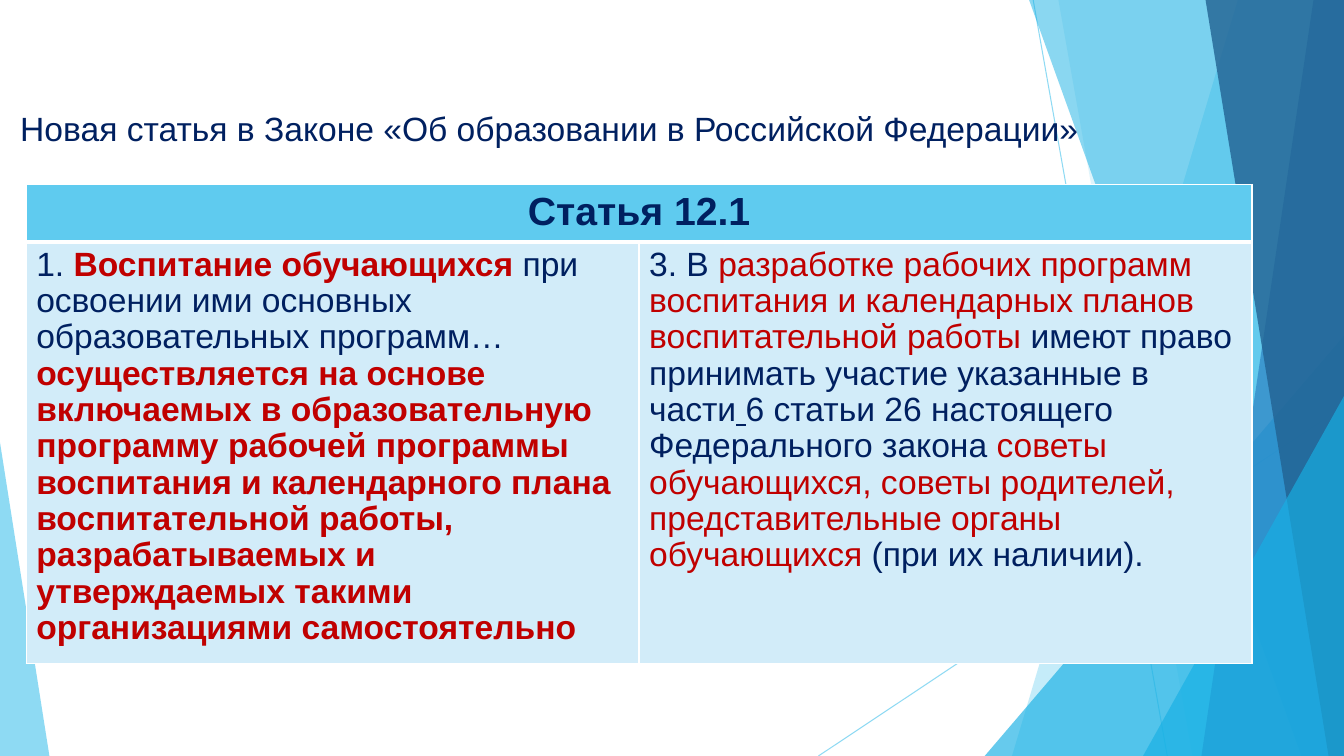
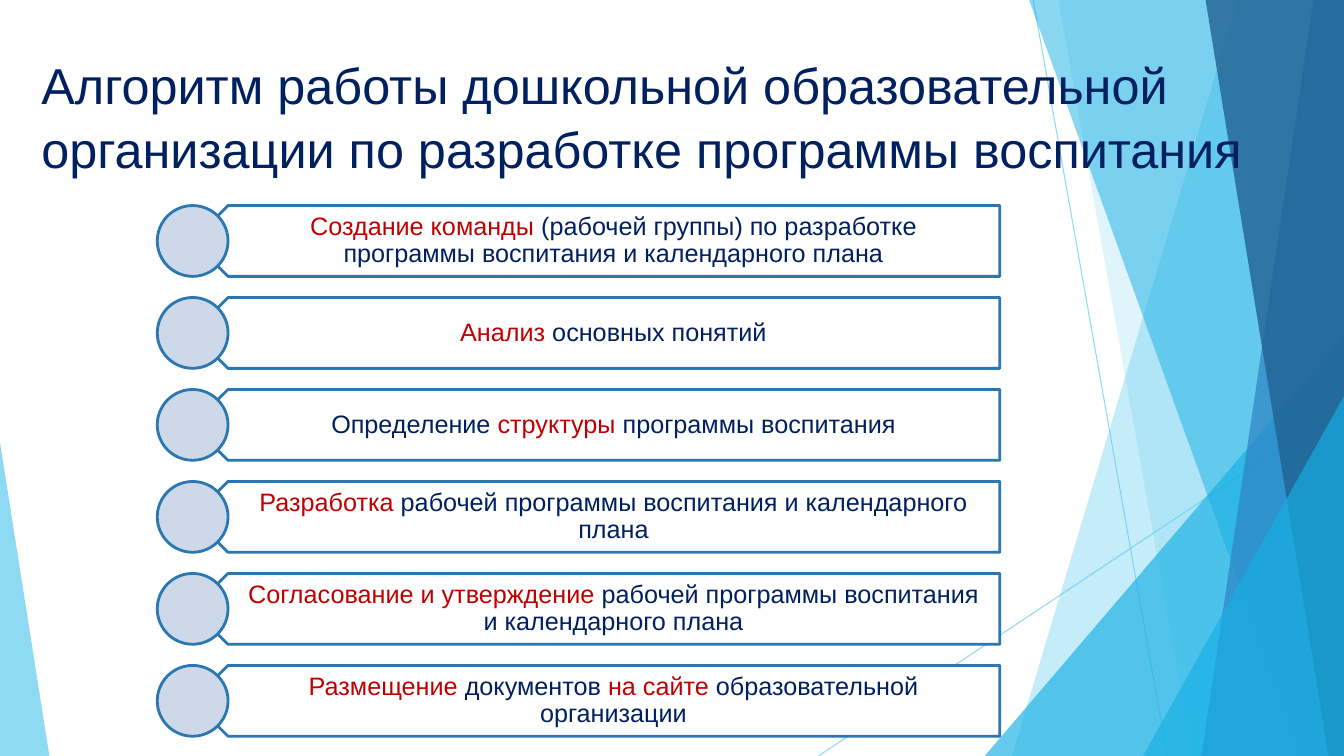
from dataclasses import dataclass

import pptx
import pptx.dml.color
import pptx.enum.shapes
import pptx.enum.text
import pptx.oxml.ns
import pptx.oxml.xmlchemy
import pptx.shapes.base
import pptx.shapes.group
import pptx.slide
import pptx.table
import pptx.text.text
import pptx.util
from lxml import etree

Pt = pptx.util.Pt
RGBColor = pptx.dml.color.RGBColor
Align = pptx.enum.text.PP_ALIGN
Anchor = pptx.enum.text.MSO_ANCHOR
Shape = pptx.enum.shapes.MSO_SHAPE
qn = pptx.oxml.ns.qn

NAVY = RGBColor(0x00, 0x20, 0x60)
RED = RGBColor(0xC0, 0x00, 0x00)
WHITE = RGBColor(0xFF, 0xFF, 0xFF)
SKY = RGBColor(0x5F, 0xCB, 0xEF)
CYAN = RGBColor(0x17, 0xB0, 0xE4)
BLUE = RGBColor(0x2E, 0x83, 0xC3)
DEEP_BLUE = RGBColor(0x22, 0x62, 0x92)
PALE_SKY = RGBColor(0xD2, 0xEC, 0xF9)
OUTLINE = RGBColor(0x2A, 0x77, 0xB1)
BULLET = RGBColor(0xCD, 0xD9, 0xE9)

FONT = "Arial"
WIDTH, HEIGHT = 960, 540


@dataclass(frozen=True)
class Span:
    text: str
    color: RGBColor = NAVY
    bold: bool = False
    underline: bool = False


@dataclass(frozen=True)
class Ray:
    start: tuple[float, float]
    end: tuple[float, float]


@dataclass(frozen=True)
class Band:
    top_x: float
    bottom_x: float
    color: RGBColor
    opacity: int


@dataclass(frozen=True)
class Wedge:
    left: float
    top: float
    width: float
    apex: float
    color: RGBColor
    opacity: int


RAYS = [Ray((738, 0), (833.8, HEIGHT)), Ray((WIDTH, 290.2), (584.6, HEIGHT))]

FACETS = [
    Band(884.2, 722.9, SKY, 36),
    Band(756, 851.8, SKY, 20),
    Wedge(703.4, 239.8, 256.6, 1, CYAN, 66),
    Band(735.1, 929.5, CYAN, 50),
    Band(938.2, 858.2, BLUE, 70),
    Band(861.1, 949, DEEP_BLUE, 80),
    Wedge(816.5, 283, 143.5, 1, CYAN, 66),
    Wedge(0, 316.1, 35.3, 0, SKY, 70),
]

ARTICLE = [
    [
        Span("1. "),
        Span("Воспитание обучающихся", RED, bold=True),
        Span(" при освоении ими основных образовательных программ… "),
        Span(
            "осуществляется на основе включаемых в образовательную программу "
            "рабочей программы воспитания и календарного плана воспитательной "
            "работы, разрабатываемых и утверждаемых такими организациями "
            "самостоятельно",
            RED,
            bold=True,
        ),
    ],
    [
        Span("3. В "),
        Span(
            "разработке рабочих программ воспитания и календарных планов "
            "воспитательной работы ",
            RED,
        ),
        Span("имеют право принимать участие указанные в части"),
        Span(" ", underline=True),
        Span("6 статьи 26 настоящего Федерального закона "),
        Span(
            "советы обучающихся, советы родителей, представительные органы "
            "обучающихся ",
            RED,
        ),
        Span("(при их наличии)."),
    ],
]

STEPS = [
    [
        Span("Создание команды ", RED),
        Span("(рабочей группы) по разработке программы воспитания и календарного плана"),
    ],
    [Span("Анализ", RED), Span(" основных понятий")],
    [Span("Определение "), Span("структуры", RED), Span(" программы воспитания")],
    [
        Span("Разработка", RED),
        Span(" рабочей программы воспитания и календарного плана"),
    ],
    [
        Span("Согласование и утверждение ", RED),
        Span("рабочей программы воспитания и календарного плана"),
    ],
    [
        Span("Размещение", RED),
        Span(" документов "),
        Span("на сайте", RED),
        Span(" образовательной организации"),
    ],
]


def write(para: pptx.text.text._Paragraph, spans: list[Span], size: float) -> None:
    for span in spans:
        run = para.add_run()
        run.text = span.text
        run.font.name = FONT
        run.font.size = Pt(size)
        run.font.bold = span.bold
        run.font.underline = span.underline
        run.font.color.rgb = span.color


def set_opacity(shape: pptx.shapes.base.BaseShape, percent: int) -> None:
    for color in shape._element.spPr.iter(qn("a:srgbClr")):
        etree.SubElement(color, qn("a:alpha"), val=str(percent * 1000))


def add_ray(group: pptx.shapes.group.GroupShape, ray: Ray) -> None:
    points = [Pt(value) for value in (*ray.start, *ray.end)]
    line = group.shapes.add_connector(pptx.enum.shapes.MSO_CONNECTOR.STRAIGHT, *points)
    line.line.color.rgb = SKY
    line.line.width = Pt(0.75)
    set_opacity(line, 70)
    etree.SubElement(line._element.spPr, qn("a:effectLst"))


def add_facet(group: pptx.shapes.group.GroupShape, facet: Band | Wedge) -> None:
    if isinstance(facet, Band):
        outline = group.shapes.build_freeform(Pt(facet.top_x), 0)
        corners = [(WIDTH, 0), (WIDTH, HEIGHT), (facet.bottom_x, HEIGHT)]
        outline.add_line_segments([(Pt(x), Pt(y)) for x, y in corners])
        shape = outline.convert_to_shape()
    else:
        shape = group.shapes.add_shape(
            Shape.ISOSCELES_TRIANGLE,
            Pt(facet.left),
            Pt(facet.top),
            Pt(facet.width),
            Pt(HEIGHT - facet.top),
        )
        shape.adjustments[0] = facet.apex
    shape.shadow.inherit = False
    shape.fill.solid()
    shape.fill.fore_color.rgb = facet.color
    shape.line.fill.background()
    set_opacity(shape, facet.opacity)


def decorate_layout(layout: pptx.slide.SlideLayout, page: pptx.slide.Slide) -> None:
    group = page.shapes.add_group_shape()
    for ray in RAYS:
        add_ray(group, ray)
    for facet in FACETS:
        add_facet(group, facet)
    layout.shapes._spTree.insert(2, group._element)


def set_title(
    page: pptx.slide.Slide,
    text: str,
    place: tuple[float, float, float, float],
    size: float,
    spacing: float,
) -> None:
    title = page.shapes.title
    title.left, title.top, title.width, title.height = map(Pt, place)
    frame = title.text_frame
    frame.word_wrap = True
    frame.auto_size = pptx.enum.text.MSO_AUTO_SIZE.NONE
    frame.vertical_anchor = Anchor.TOP
    para = frame.paragraphs[0]
    para.alignment = Align.LEFT
    para.line_spacing = spacing
    write(para, [Span(text)], size)


def style_cell(cell: pptx.table._Cell, fill: RGBColor, borders: dict[str, float]) -> None:
    properties = cell._tc.get_or_add_tcPr()
    for side, width in borders.items():
        border = etree.SubElement(properties, qn(f"a:{side}"), w=str(Pt(width)))
        solid = etree.SubElement(border, qn("a:solidFill"))
        etree.SubElement(solid, qn("a:srgbClr"), val=str(WHITE))
    cell.fill.solid()
    cell.fill.fore_color.rgb = fill


def add_article_table(page: pptx.slide.Slide) -> None:
    table = page.shapes.add_table(2, 2, Pt(18.7), Pt(131.8), Pt(875.6), Pt(342)).table
    table.rows[0].height = Pt(41)
    table.rows[1].height = Pt(301)
    header = table.cell(0, 0)
    header.merge(table.cell(0, 1))
    for column in range(2):
        style_cell(table.cell(0, column), SKY, {"lnL": 1, "lnR": 1, "lnT": 1, "lnB": 3})
    para = header.text_frame.paragraphs[0]
    para.alignment = Align.CENTER
    write(para, [Span("Статья 12.1", bold=True)], 28)
    for column, spans in enumerate(ARTICLE):
        cell = table.cell(1, column)
        style_cell(cell, PALE_SKY, {"lnL": 1, "lnR": 1, "lnT": 3, "lnB": 1})
        para = cell.text_frame.paragraphs[0]
        para.line_spacing = 0.97
        write(para, spans, 24)


def add_step(page: pptx.slide.Slide, spans: list[Span], top: float) -> None:
    left, size, right = 112.3, 50.6, 714.2
    middle = left + size / 2
    plate = page.shapes.add_shape(
        Shape.PENTAGON, Pt(middle), Pt(top), Pt(right - middle), Pt(size)
    )
    plate._element.spPr.find(qn("a:xfrm")).set("flipH", "1")
    circle = page.shapes.add_shape(Shape.OVAL, Pt(left), Pt(top), Pt(size), Pt(size))
    for shape, fill in ((plate, WHITE), (circle, BULLET)):
        shape.shadow.inherit = False
        shape.fill.solid()
        shape.fill.fore_color.rgb = fill
        shape.line.color.rgb = OUTLINE
        shape.line.width = Pt(2)
    frame = plate.text_frame
    frame.word_wrap = True
    frame.vertical_anchor = Anchor.MIDDLE
    frame.margin_left, frame.margin_right = Pt(22), Pt(10)
    frame.margin_top = frame.margin_bottom = Pt(5)
    para = frame.paragraphs[0]
    para.alignment = Align.CENTER
    para.line_spacing = 0.9
    write(para, spans, 18)


def main() -> None:
    deck = pptx.Presentation()
    deck.slide_width, deck.slide_height = Pt(WIDTH), Pt(HEIGHT)
    layout = deck.slide_layouts[5]

    page = deck.slides.add_slide(layout)
    decorate_layout(layout, page)
    heading = "Новая статья в Законе «Об образовании в Российской Федерации»"
    set_title(page, heading, (7.2, 73.4, 828, 46.8), 24, 1)
    add_article_table(page)

    page = deck.slides.add_slide(layout)
    heading = (
        "Алгоритм работы дошкольной образовательной организации "
        "по разработке программы воспитания"
    )
    set_title(page, heading, (22.3, 31.7, 897.8, 103.7), 36, 1.07)
    for index, spans in enumerate(STEPS):
        add_step(page, spans, 146.8 + index * 65.7)

    deck.save("out.pptx")


if __name__ == "__main__":
    main()
